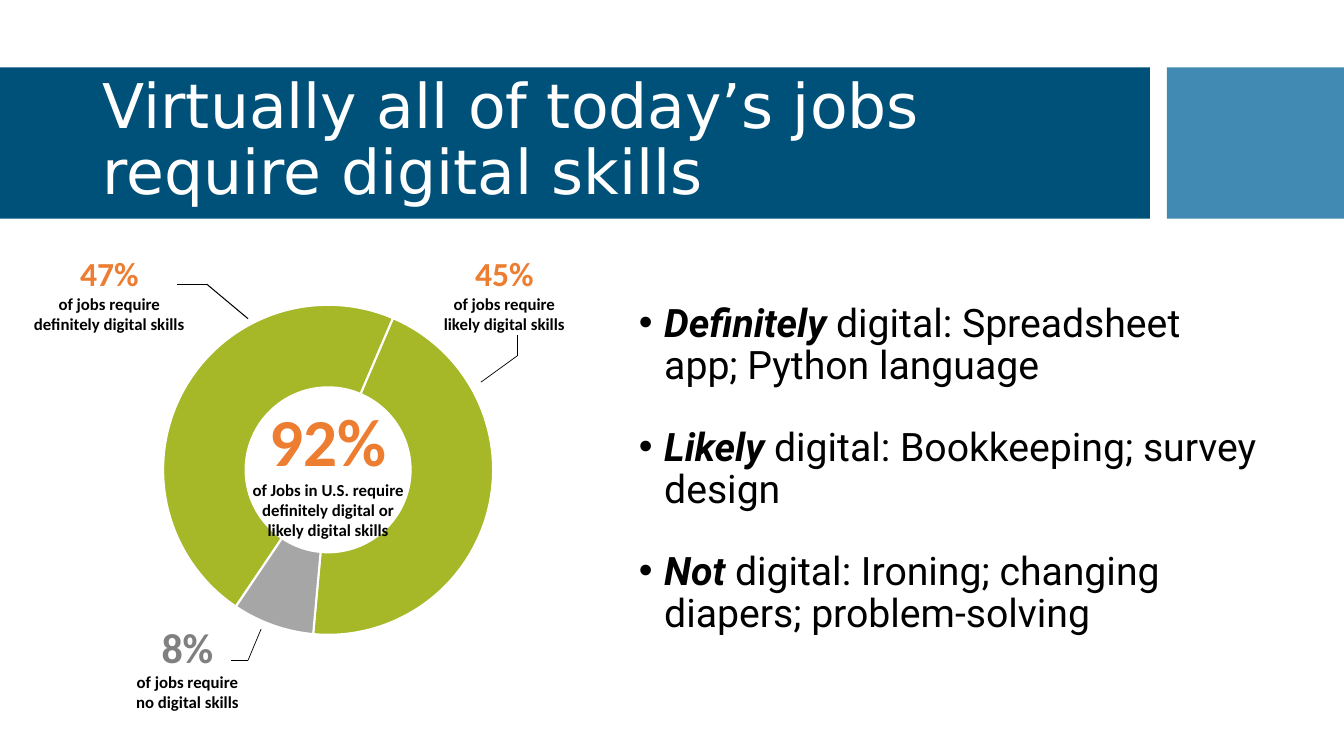
from itertools import pairwise

from lxml.etree import SubElement
from pptx import Presentation
from pptx.chart.data import CategoryChartData
from pptx.dml.color import RGBColor
from pptx.enum.chart import XL_CHART_TYPE as ChartType
from pptx.enum.dml import MSO_PATTERN as Pattern
from pptx.enum.shapes import MSO_CONNECTOR as Connector, MSO_SHAPE as Shape
from pptx.enum.text import MSO_ANCHOR as Anchor, MSO_AUTO_SIZE as AutoSize, PP_ALIGN as Align
from pptx.oxml import parse_xml
from pptx.oxml.ns import nsdecls, qn
from pptx.util import Cm, Pt

NAVY, BLUE, ORANGE, GREEN = "005179", "418AB3", "ED7D31", "A6B727"
GREY, DARK_GREY, BLACK, WHITE = "A6A6A6", "808080", "000000", "FFFFFF"

CALLOUTS = [
    ((6.02, 9.93, 4.5, 3.84), "92%", 48, ORANGE,
     "of Jobs in U.S. require definitely digital or likely digital skills"),
    ((0.56, 6.25, 4.39, 2.31), "47%", 24, ORANGE,
     "of jobs require definitely digital skills"),
    ((10.74, 6.25, 3.94, 2.31), "45%", 24, ORANGE,
     "of jobs require likely digital skills"),
    ((3, 15.54, 3.45, 2.57), "8%", 30, DARK_GREY,
     "of jobs require no digital skills"),
]
LEADERS = [
    ([(4.47, 7.16), (5.21, 7.16), (6.25, 8.03)], (0.75, 0.75)),
    ([(13.03, 8.43), (13.03, 8.97), (12.12, 9.63)], (0.75, 0.5)),
    ([(5.82, 16.64), (6.25, 16.64), (6.58, 15.85)], (0.75, 0.5)),
]
EXAMPLES = [
    ("Definitely", "digital: Spreadsheet app; Python language"),
    ("Likely", "digital: Bookkeeping; survey design"),
    ("Not", "digital: Ironing; changing diapers; problem-solving"),
]


def rgb(value):
    return RGBColor.from_string(value)


def set_attrs(obj, values):
    for name, value in values.items():
        setattr(obj, name, value)


def add_run(p, text, font, size, color, **style):
    r = p.add_run()
    r.text = text
    set_attrs(r.font, {"name": font, "size": Pt(size), **style})
    r.font.color.rgb = rgb(color)


def add_text_box(s, box, **frame):
    tf = s.shapes.add_textbox(*map(Cm, box)).text_frame
    set_attrs(tf, {"word_wrap": True, **frame})
    return tf


def add_bar(s, box, color):
    sp = s.shapes.add_shape(Shape.RECTANGLE, *map(Cm, box))
    sp.shadow.inherit = False
    sp.fill.solid()
    sp.fill.fore_color.rgb = rgb(color)
    sp.line.fill.background()


def add_title(s, box, text):
    tf = add_text_box(s, box, vertical_anchor=Anchor.MIDDLE)
    p = tf.paragraphs[0]
    p.line_spacing = 0.9
    add_run(p, text, "DejaVu Sans", 44, WHITE)


def add_callout(s, box, share, size, color, caption):
    tf = add_text_box(s, box, auto_size=AutoSize.SHAPE_TO_FIT_TEXT)
    lines = [(share, size, color), (caption, 12, BLACK)]
    for p, line in zip([tf.paragraphs[0], tf.add_paragraph()], lines):
        p.alignment = Align.CENTER
        text, points, shade = line
        add_run(p, text, "Calibri", points, shade, bold=True)


def add_leader(s, points, widths):
    for (start, end), width in zip(pairwise(points), widths):
        line = s.shapes.add_connector(Connector.STRAIGHT, *map(Cm, start + end))
        line.line.width = Pt(width)
        line.line.color.rgb = rgb(BLACK)
        SubElement(line._element.spPr, qn("a:effectLst"))


def add_bullets(s, box, items):
    tf = add_text_box(s, box, margin_left=0, margin_top=0, margin_bottom=0)
    for i, (kind, examples) in enumerate(items):
        p = tf.add_paragraph() if i else tf.paragraphs[0]
        pPr = p._p.get_or_add_pPr()
        pPr.set("marL", str(Cm(0.64)))
        pPr.set("indent", str(-Cm(0.64)))
        set_attrs(p, {"line_spacing": 0.9, "space_before": Pt(10 if i else 0),
                      "space_after": Pt(18)})
        SubElement(pPr, qn("a:buFont")).set("typeface", "Arial")
        SubElement(pPr, qn("a:buChar")).set("char", "•")
        add_run(p, kind, "Roboto", 28, BLACK, bold=True, italic=True)
        add_run(p, " " + examples, "Roboto", 28, BLACK)


def set_plot_area(chart, hole, angle, frame):
    area = chart._chartSpace.chart.plotArea
    for layout in area.findall(qn("c:layout")):
        area.remove(layout)
    sizes = "".join(f'<c:{k} val="{v}"/>' for k, v in zip("xywh", frame))
    area.insert(0, parse_xml(
        f'<c:layout {nsdecls("c")}><c:manualLayout><c:layoutTarget val="inner"/>'
        f'<c:xMode val="edge"/><c:yMode val="edge"/>{sizes}'
        "</c:manualLayout></c:layout>"))
    ring = area.find(qn("c:doughnutChart"))
    ring.find(qn("c:holeSize")).set("val", str(hole))
    ring.find(qn("c:firstSliceAng")).set("val", str(angle))


def add_doughnut(s, box):
    data = CategoryChartData()
    data.categories = ["1", "2", "3"]
    data.add_series("Series 1", (47, 45, 8))
    chart = s.shapes.add_chart(ChartType.DOUGHNUT, *map(Cm, box), data).chart
    set_attrs(chart, {"has_legend": False, "has_title": False})
    set_attrs(chart.font, {"name": "Karla", "size": Pt(10)})
    chart.font.color.rgb = rgb(BLACK)
    plot = chart.plots[0]
    set_attrs(plot, {"vary_by_categories": True, "has_data_labels": False})
    for i, color in enumerate([GREEN, GREEN, GREY]):
        fmt = plot.series[0].points[i].format
        if i == 1:
            fmt.fill.patterned()
            fmt.fill.pattern = Pattern.DARK_HORIZONTAL
            fmt.fill.back_color.rgb = rgb(WHITE)
        else:
            fmt.fill.solid()
        fmt.fill.fore_color.rgb = rgb(color)
        fmt.line.color.rgb = rgb(WHITE)
        fmt.line.width = Pt(1.5)
    set_plot_area(chart, 75, 214, (0.14, 0.04, 0.72, 0.92))


def main():
    prs = Presentation()
    set_attrs(prs, {"slide_width": Cm(33.87), "slide_height": Cm(19.05)})
    s = prs.slides.add_slide(prs.slide_layouts[6])
    add_bar(s, (0, 1.7, 28.98, 3.81), NAVY)
    add_bar(s, (29.41, 1.7, 4.46, 3.81), BLUE)
    add_title(s, (2.34, 2.03, 21.67, 3.07),
              "Virtually all of today’s jobs require digital skills")
    add_doughnut(s, (2.49, 7.32, 11.56, 9.04))
    for callout in CALLOUTS:
        add_callout(s, *callout)
    add_bullets(s, (16.1, 7.65, 15.9, 10.46), EXAMPLES)
    for leader in LEADERS:
        add_leader(s, *leader)
    prs.save("out.pptx")


if __name__ == "__main__":
    main()
